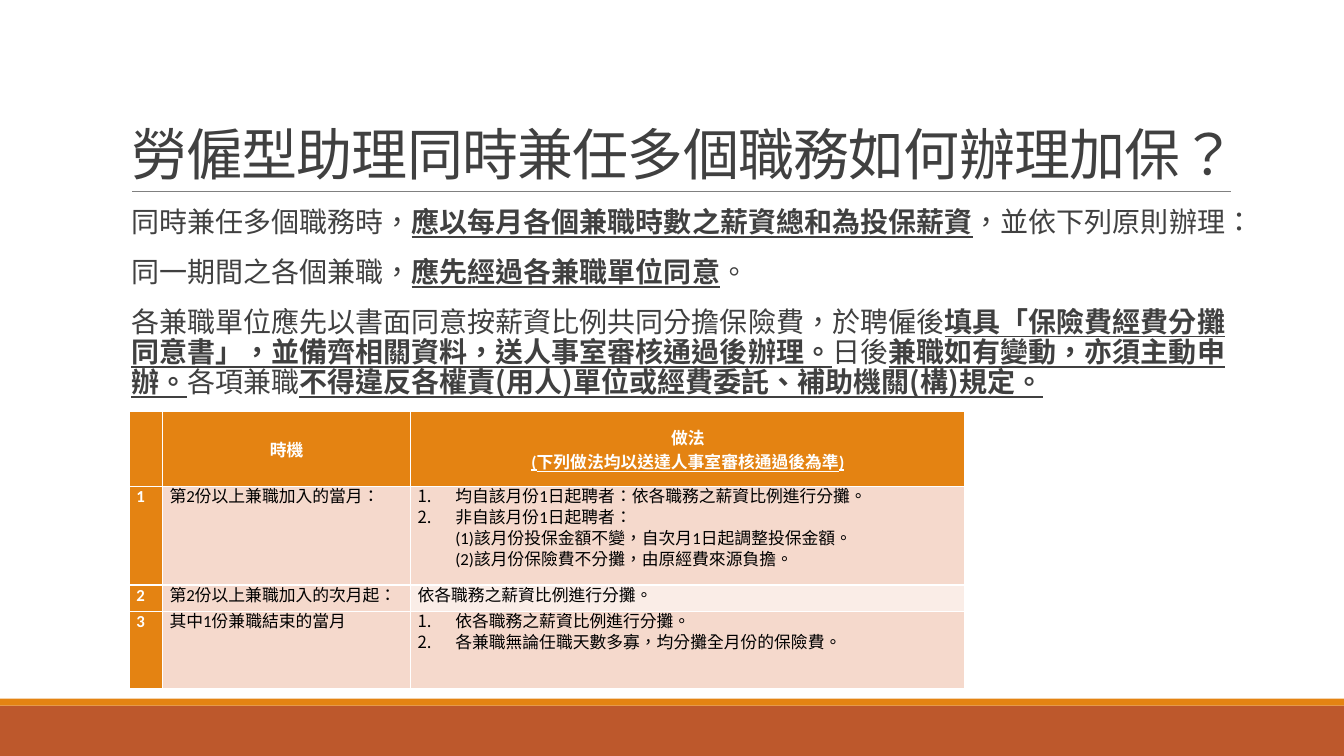
from lxml import etree
from pptx import Presentation
from pptx.dml.color import RGBColor
from pptx.enum import shapes, text
from pptx.oxml import ns
from pptx.util import Pt

ORANGE = RGBColor(0xE4, 0x83, 0x12)
RUST = RGBColor(0xBD, 0x58, 0x2C)
GRAY = RGBColor(0x80, 0x80, 0x80)
DARK = RGBColor(0x40, 0x40, 0x40)
PINK = RGBColor(0xF5, 0xD9, 0xCC)
PALE = RGBColor(0xFA, 0xED, 0xE7)
WHITE = RGBColor(0xFF, 0xFF, 0xFF)
BLACK = RGBColor(0, 0, 0)
CJK = "Noto Sans CJK SC"
LATIN = "Calibri"

TITLE = "勞僱型助理同時兼任多個職務如何辦理加保？"
# Every second piece of a paragraph is stressed.
RULES = [
    ["同時兼任多個職務時，", "應以每月各個兼職時數之薪資總和為投保薪資", "，並依下列原則辦理："],
    ["同一期間之各個兼職，", "應先經過各兼職單位同意", "。"],
    ["各兼職單位應先以書面同意按薪資比例共同分擔保險費，於聘僱後",
     "填具「保險費經費分攤同意書」，並備齊相關資料，送人事室審核通過後辦理。",
     "日後", "兼職如有變動，亦須主動申辦。", "各項兼職",
     "不得違反各權責(用人)單位或經費委託、補助機關(構)規定。"],
]
HEADS = ["", "時機", "做法\n(下列做法均以送達人事室審核通過後為準)"]
# Each step: time, lines of the method, number of leading lines that are numbered.
STEPS = [
    ("第2份以上兼職加入的當月：",
     ["均自該月份1日起聘者：依各職務之薪資比例進行分攤。",
      "非自該月份1日起聘者：",
      "(1)該月份投保金額不變，自次月1日起調整投保金額。",
      "(2)該月份保險費不分攤，由原經費來源負擔。"], 2),
    ("第2份以上兼職加入的次月起：", ["依各職務之薪資比例進行分攤。"], 0),
    ("其中1份兼職結束的當月",
     ["依各職務之薪資比例進行分攤。",
      "各兼職無論任職天數多寡，均分攤全月份的保險費。"], 2),
]
COLS = [23.76, 177.12, 396]
ROWS = [53.28, 70.56, 18.72, 55.44]


def style(run, size, color, face, bold=False, line=False):
    font = run.font
    font.size, font.bold, font.underline = Pt(size), bold, line
    font.color.rgb = color
    font.name = face
    props = run._r.get_or_add_rPr()
    props.set("lang", "zh-TW")
    etree.SubElement(props, ns.qn("a:ea")).set("typeface", CJK)


def indent(para, left, first=0, mark="a:buNone"):
    props = para._p.get_or_add_pPr()
    props.set("marL", str(Pt(left)))
    props.set("indent", str(Pt(first)))
    return etree.SubElement(props, ns.qn(mark))


def place(shape, box):
    shape.left, shape.top, shape.width, shape.height = map(Pt, box)


def band(slide, box, color):
    bar = slide.shapes.add_shape(shapes.MSO_SHAPE.RECTANGLE, *map(Pt, box))
    bar.fill.solid()
    bar.fill.fore_color.rgb = color
    bar.line.fill.background()
    bar.shadow.inherit = False


def head(slide, box):
    """Title with a thin rule along its lower edge."""
    title = slide.shapes.title
    place(title, box)
    frame = title.text_frame
    frame.text = TITLE
    frame.auto_size = text.MSO_AUTO_SIZE.NONE
    frame.vertical_anchor = text.MSO_ANCHOR.BOTTOM
    para = frame.paragraphs[0]
    para.alignment = text.PP_ALIGN.LEFT
    para.line_spacing = 0.85
    style(para.runs[0], 40, DARK, CJK)
    para.runs[0]._r.get_or_add_rPr().set("spc", "-50")

    left, top, width, height = box
    base = top + height
    rule = slide.shapes.add_connector(
        shapes.MSO_CONNECTOR.STRAIGHT,
        Pt(left + 8), Pt(base), Pt(left + width + 0.8), Pt(base))
    rule.line.color.rgb = GRAY
    rule.line.width = Pt(0.5)
    etree.SubElement(rule._element.spPr, ns.qn("a:effectLst"))


def body(slide, box):
    shape = slide.placeholders[1]
    place(shape, box)
    frame = shape.text_frame
    frame.auto_size = text.MSO_AUTO_SIZE.NONE
    frame.margin_left = frame.margin_right = 0
    frame.margin_top = frame.margin_bottom = Pt(3.6)
    frame.text = "\n".join("" for _ in RULES)
    for para, parts in zip(frame.paragraphs, RULES):
        para.line_spacing = 0.9
        para.space_before, para.space_after = Pt(12), Pt(2)
        indent(para, 7.2)
        for i, part in enumerate(parts):
            run = para.add_run()
            run.text = part
            stress = i % 2 == 1
            style(run, 20, DARK, CJK, stress, stress)


def cell(grid, row, col, words, fill, color, bold=False):
    """Fill one table cell and return its paragraphs."""
    item = grid.cell(row, col)
    item.fill.solid()
    item.fill.fore_color.rgb = fill
    item.margin_left = item.margin_right = Pt(4.9)
    item.margin_top = item.margin_bottom = 0
    item.text_frame.text = words
    if row == 0:
        item.vertical_anchor = text.MSO_ANCHOR.MIDDLE
    for para in item.text_frame.paragraphs:
        if row == 0:
            para.alignment = text.PP_ALIGN.CENTER
        else:
            para.line_spacing = Pt(15)
        for run in para.runs:
            style(run, 12, color, LATIN, bold)
    return item.text_frame.paragraphs


def steps(slide, left, top):
    frame = slide.shapes.add_table(
        len(ROWS), len(COLS), Pt(left), Pt(top), Pt(sum(COLS)), Pt(sum(ROWS)))
    grid = frame.table
    grid.first_col = True
    for col, width in zip(grid.columns, COLS):
        col.width = Pt(width)
    for row, height in zip(grid.rows, ROWS):
        row.height = Pt(height)

    for col, words in enumerate(HEADS):
        paras = cell(grid, 0, col, words, ORANGE, WHITE, True)
    paras[1].runs[0].font.underline = True

    for row, (time, lines, count) in enumerate(STEPS, 1):
        cell(grid, row, 0, str(row), ORANGE, WHITE, True)
        cell(grid, row, 1, time, PINK, BLACK)
        fill = PINK if count else PALE
        paras = cell(grid, row, 2, "\n".join(lines), fill, BLACK)
        for i, para in enumerate(paras):
            if i < count:
                mark = indent(para, 27, -27, "a:buAutoNum")
                mark.set("type", "arabicPeriod")
            elif count:
                indent(para, 27)


def main():
    deck = Presentation()
    deck.slide_width, deck.slide_height = Pt(960), Pt(540)
    slide = deck.slides.add_slide(deck.slide_layouts[1])
    band(slide, (0, 504, 960, 36), RUST)
    band(slide, (0, 499, 960, 5), ORANGE)
    head(slide, (86.4, 22.3, 792, 114.5))
    body(slide, (86.4, 145.4, 792, 316.8))
    steps(slide, 92.5, 294)
    deck.save("out.pptx")


if __name__ == "__main__":
    main()
